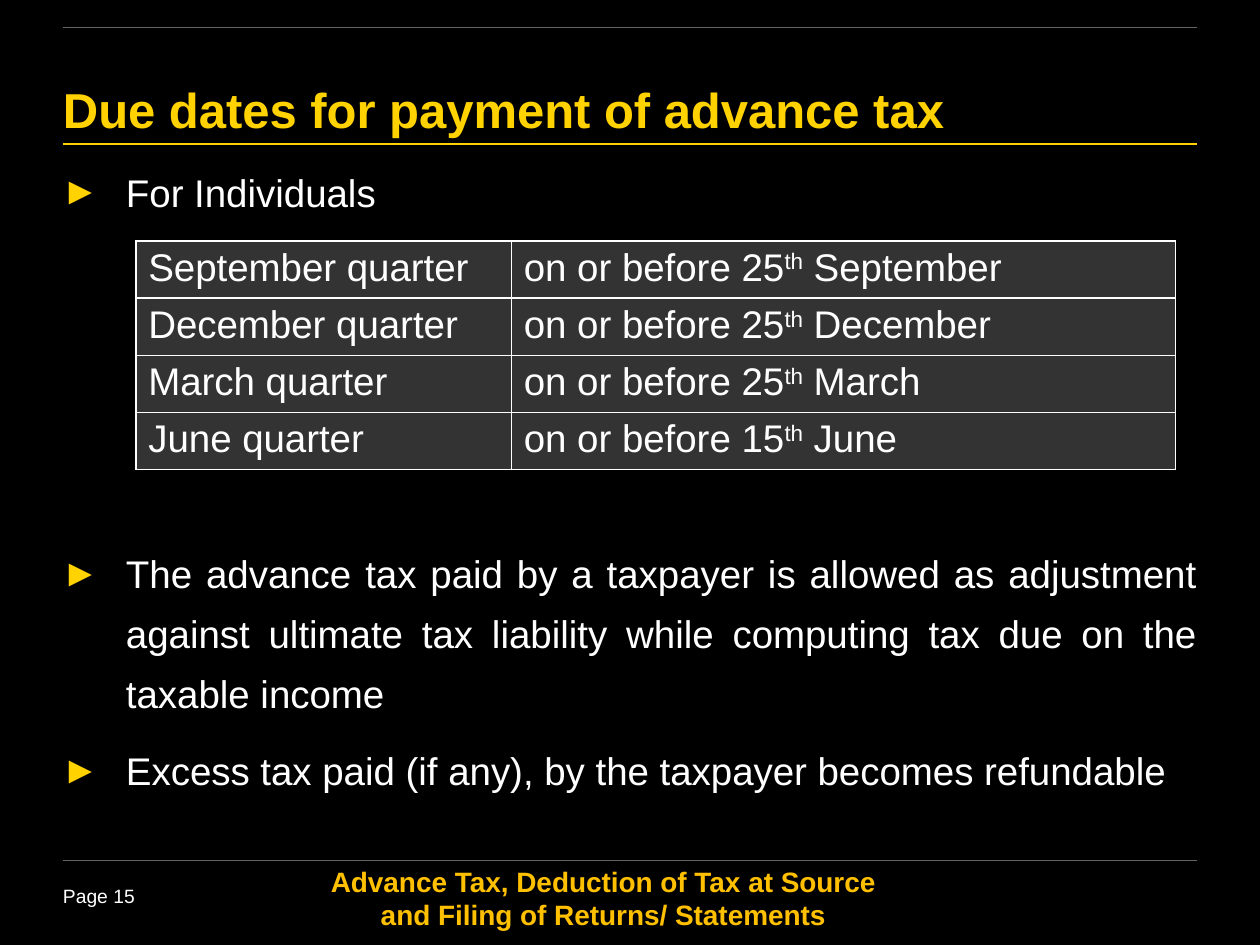
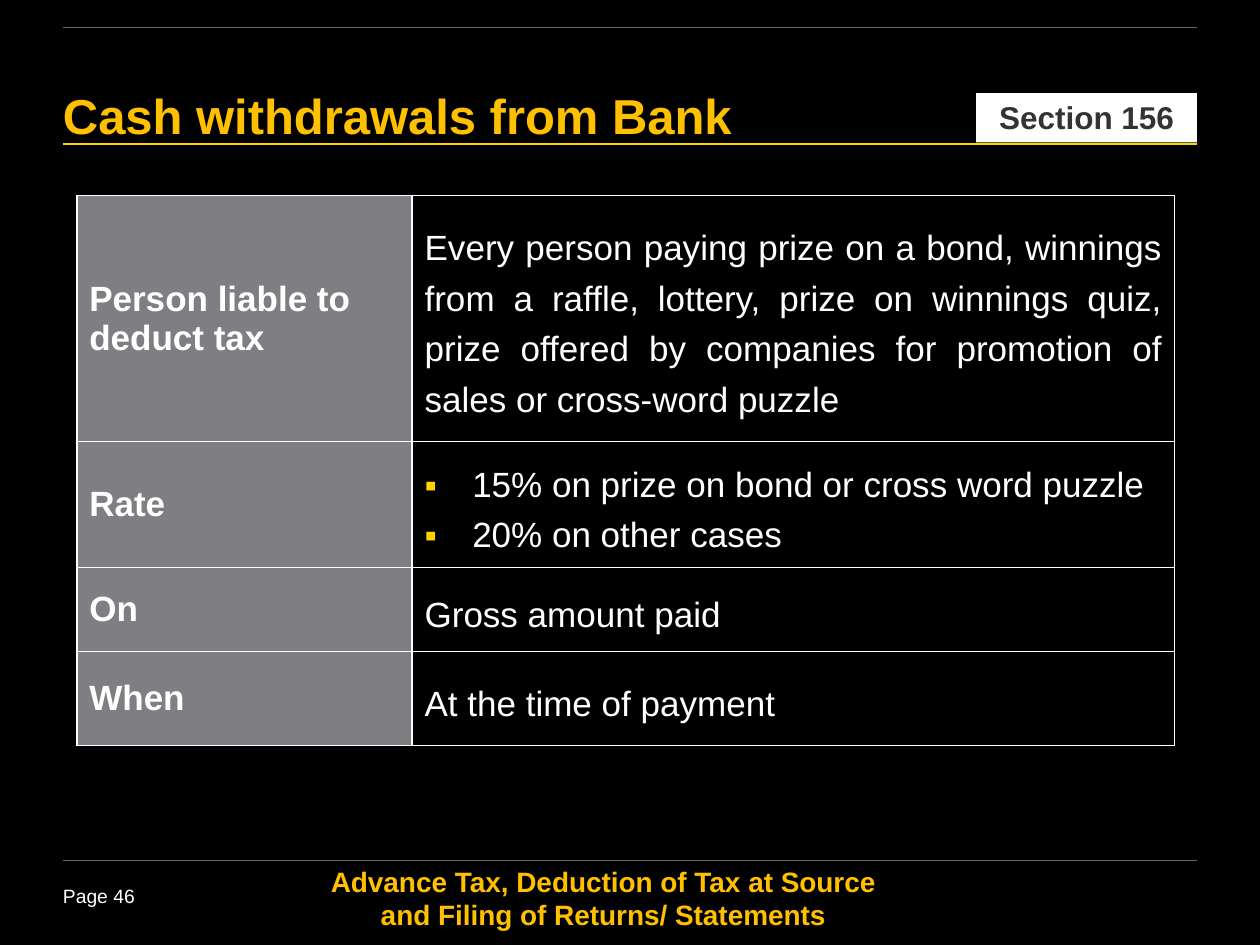
from dataclasses import dataclass

from lxml.etree import SubElement
from pptx import Presentation
from pptx.dml.color import RGBColor as Color
from pptx.enum.shapes import MSO_CONNECTOR as Connector, MSO_SHAPE as Shape
from pptx.enum.text import MSO_ANCHOR as Anchor, PP_ALIGN as Align
from pptx.oxml.ns import qn
from pptx.util import Cm, Pt


# Colours, type sizes and shared measures (cm)
@dataclass(frozen=True)
class Theme:
    font: str = "Arial"
    black: str = "000000"
    white: str = "FFFFFF"
    yellow: str = "FFD200"
    amber: str = "FFC000"
    rule_grey: str = "646464"
    dark_grey: str = "333333"
    label_grey: str = "7F7E82"
    title_size: int = 28
    body_size: int = 22
    table_size: int = 20
    tag_size: int = 18
    footer_size: int = 16
    page_size: int = 11
    left: float = 1.27
    right: float = 24.13
    tight: float = 0.85
    loose: float = 1.3


FOOTER = "Advance Tax, Deduction of Tax at Source and Filing of Returns/ Statements"


def apply(target, values):
    for name, value in values.items():
        setattr(target, name, value)


class Deck:
    def __init__(self, theme):
        self.theme = theme
        self.presentation = Presentation()
        apply(self.presentation, {"slide_width": Cm(25.4), "slide_height": Cm(19.05)})
        self.slide = None

    # Slide frame: background, rules, footer and page number
    def new_slide(self, page):
        theme = self.theme
        layout = self.presentation.slide_layouts[6]
        self.slide = self.presentation.slides.add_slide(layout)
        self.paint(self.slide.background.fill, theme.black)
        self.text((6.35, 17.42, 11.63, 1.32), [FOOTER], theme.footer_size,
                  theme.amber, bold=True, alignment=Align.CENTER)
        self.text((theme.left, 17.83, 1.85, 0.56), [f"Page {page}"],
                  theme.page_size, theme.white)
        self.rule(2.9, theme.yellow, 1.5)
        self.rule(17.35, theme.rule_grey, 0.25)
        self.rule(0.56, theme.rule_grey, 0.5)

    def paint(self, fill, color):
        fill.solid()
        fill.fore_color.rgb = Color.from_string(color)

    def rule(self, top, color, width):
        line = self.slide.shapes.add_connector(
            Connector.STRAIGHT, Cm(self.theme.left), Cm(top),
            Cm(self.theme.right), Cm(top))
        line.line.color.rgb = Color.from_string(color)
        line.line.width = Pt(width)
        SubElement(line._element.spPr, qn("a:effectLst"))

    def bullet(self, paragraph, character, indent):
        properties = paragraph._p.get_or_add_pPr()
        properties.set("marL", str(Cm(indent)))
        properties.set("indent", str(-Cm(indent)))
        color = SubElement(properties, qn("a:buClr"))
        SubElement(color, qn("a:srgbClr"), val=self.theme.yellow)
        SubElement(properties, qn("a:buFont"), typeface=self.theme.font)
        SubElement(properties, qn("a:buChar"), char=character)

    # Text between ^ marks is set as superscript
    def add_paragraphs(self, frame, texts, size, color, bold=False, bullet=None,
                       **formats):
        for number, text in enumerate(texts):
            paragraph = frame.add_paragraph() if number else frame.paragraphs[0]
            if bullet:
                self.bullet(paragraph, *bullet)
            apply(paragraph, formats)
            for part, piece in enumerate(text.split("^")):
                run = paragraph.add_run()
                run.text = piece
                apply(run.font, {"name": self.theme.font, "size": Pt(size), "bold": bold})
                run.font.color.rgb = Color.from_string(color)
                if part % 2:
                    run._r.get_or_add_rPr().set("baseline", "30000")

    def fill_frame(self, shape, texts, size, color, inset=0, anchor=Anchor.TOP, **formats):
        frame = shape.text_frame
        apply(frame, {"word_wrap": True, "vertical_anchor": anchor,
                      "margin_left": 0, "margin_right": 0,
                      "margin_top": Cm(inset), "margin_bottom": 0})
        self.add_paragraphs(frame, texts, size, color, **formats)
        return frame

    def text(self, place, texts, size, color, **formats):
        box = self.slide.shapes.add_textbox(*map(Cm, place))
        return self.fill_frame(box, texts, size, color, **formats)

    def title(self, text, place, color):
        self.text(place, [text], self.theme.title_size, color, inset=0.1,
                  bold=True, line_spacing=self.theme.tight)

    def section_tag(self, text):
        theme = self.theme
        tag = self.slide.shapes.add_shape(
            Shape.RECTANGLE, Cm(19.68), Cm(1.88), Cm(4.45), Cm(0.99))
        tag.shadow.inherit = False
        self.paint(tag.fill, theme.white)
        tag.line.fill.background()
        self.fill_frame(tag, [text], theme.tag_size, theme.dark_grey, inset=0.1,
                        anchor=Anchor.MIDDLE, bold=True, alignment=Align.CENTER,
                        line_spacing=theme.tight)

    def border(self, cell):
        properties = cell._tc.get_or_add_tcPr()
        for side in ("lnL", "lnR", "lnT", "lnB"):
            line = SubElement(properties, qn(f"a:{side}"), w=str(Pt(1)))
            fill = SubElement(line, qn("a:solidFill"))
            SubElement(fill, qn("a:srgbClr"), val=self.theme.white)

    # Each column style holds its fill and text formats
    def table(self, corner, widths, heights, rows, styles, size, margin, anchor):
        frame = self.slide.shapes.add_table(
            len(heights), len(widths), *map(Cm, (*corner, sum(widths), sum(heights))))
        table = frame.table
        apply(table, {"first_row": False, "horz_banding": False})
        for column, width in zip(table.columns, widths):
            column.width = Cm(width)
        for row, height, contents in zip(table.rows, heights, rows):
            row.height = Cm(height)
            for cell, texts, (fill, formats) in zip(row.cells, contents, styles):
                self.border(cell)
                self.paint(cell.fill, fill)
                apply(cell, {"vertical_anchor": anchor,
                             "margin_left": Cm(0.25), "margin_right": Cm(0.25),
                             "margin_top": Cm(margin), "margin_bottom": Cm(margin)})
                marker = ("▪", 0.96) if len(texts) > 1 else None
                self.add_paragraphs(cell.text_frame, texts, size, self.theme.white,
                                    bullet=marker, **formats)


# Slide 1: due dates
def add_due_dates(deck):
    theme = deck.theme
    deck.new_slide(15)
    deck.title("Due dates for payment of advance tax",
               (theme.left, 1.68, 23.5, 1.24), theme.yellow)
    body = deck.text(
        (1.24, 3.12, 22.89, 13.92),
        ["For Individuals",
         "The advance tax paid by a taxpayer is allowed as adjustment against "
         "ultimate tax liability while computing tax due on the taxable income",
         "Excess tax paid (if any), by the taxpayer becomes refundable"],
        theme.body_size, theme.white, bullet=("►", 1.3), alignment=Align.JUSTIFY,
        line_spacing=theme.loose, space_after=Pt(10))
    body.paragraphs[0].space_after = Pt(183.5)  # room for the table

    due_days = {"September": 25, "December": 25, "March": 25, "June": 15}
    rows = [([f"{month} quarter"], [f"on or before {day}^th^ {month}"])
            for month, day in due_days.items()]
    deck.table((2.74, 4.86), (7.57, 13.39), [1.12] * len(rows), rows,
               [(theme.dark_grey, {})] * 2, theme.body_size, 0.11, Anchor.TOP)


# Slide 2: cash withdrawals
def add_cash_withdrawals(deck):
    theme = deck.theme
    deck.new_slide(46)
    deck.section_tag("Section 156")
    deck.title("Cash withdrawals from Bank",
               (theme.left, 1.8, 18.21, 1.07), theme.amber)
    rows = [
        (["Person liable to deduct tax"],
         ["Every person paying prize on a bond, winnings from a raffle, lottery, "
          "prize on winnings quiz, prize offered by companies for promotion of "
          "sales or cross-word puzzle"]),
        (["Rate"],
         ["15% on prize on bond or cross word puzzle", "20% on other cases"]),
        (["On"], ["Gross amount paid"]),
        (["When"], ["At the time of payment"]),
    ]
    styles = [(theme.label_grey, {"bold": True}),
              (theme.black, {"alignment": Align.JUSTIFY, "line_spacing": theme.loose})]
    deck.table((1.55, 3.94), (6.76, 15.37), (4.96, 2.54, 1.69, 1.9), rows,
               styles, theme.table_size, 0.13, Anchor.MIDDLE)


def main():
    deck = Deck(Theme())
    add_due_dates(deck)
    add_cash_withdrawals(deck)
    deck.presentation.save("out.pptx")


if __name__ == "__main__":
    main()
